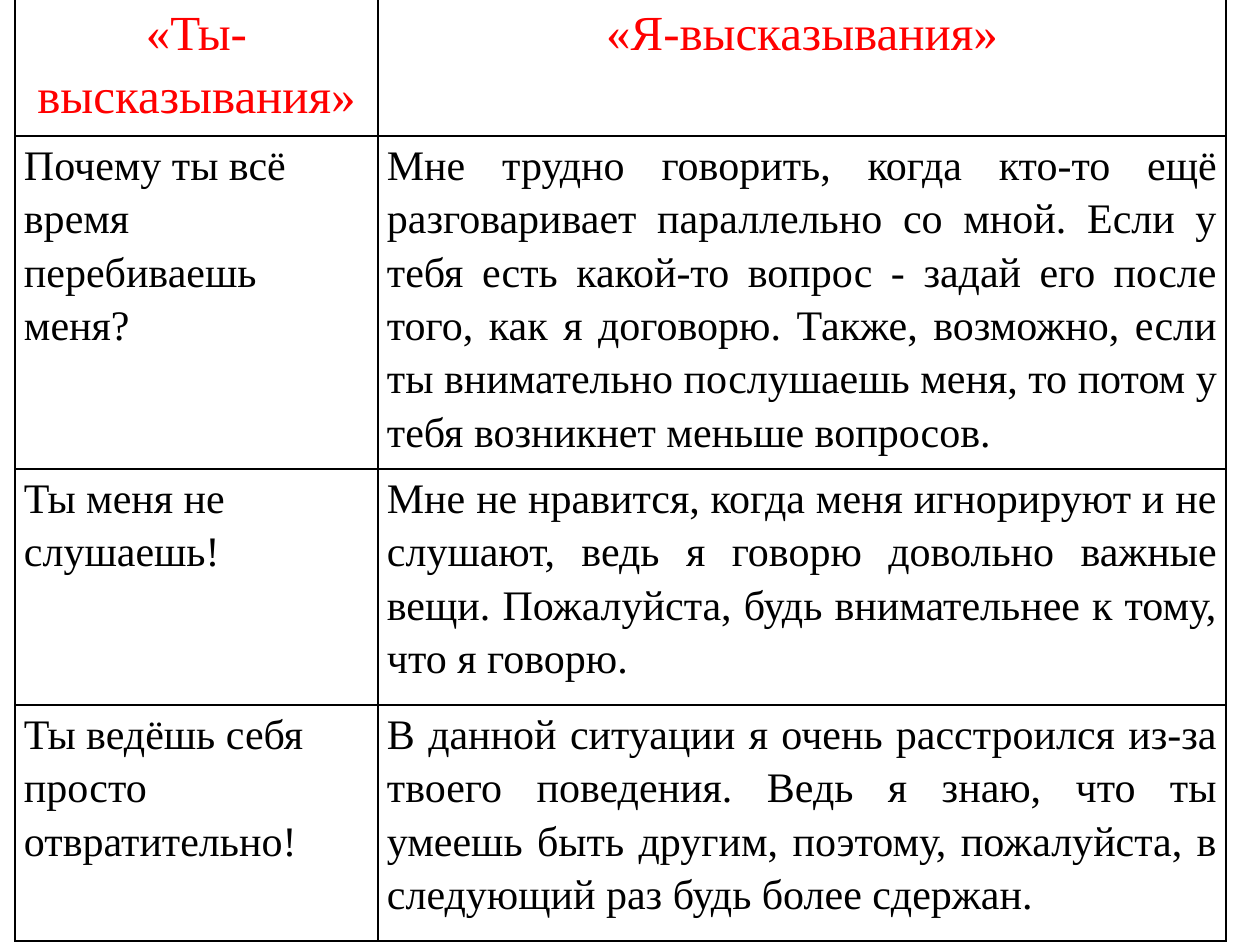
from lxml.etree import SubElement
from pptx import Presentation
from pptx.dml.color import RGBColor
from pptx.enum.text import PP_ALIGN
from pptx.oxml.ns import qn
from pptx.util import Pt

SCALE = 914400 // 126
WIDTHS = [363, 848]
HEIGHTS = [137, 333, 236, 236]
ROWS = [
    ("«Ты-высказывания»", "«Я-высказывания»"),
    ("Почему ты всё время перебиваешь меня?",
     "Мне трудно говорить, когда кто-то ещё разговаривает параллельно со мной. "
     "Если у тебя есть какой-то вопрос - задай его после того, как я договорю. "
     "Также, возможно, если ты внимательно послушаешь меня, "
     "то потом у тебя возникнет меньше вопросов."),
    ("Ты меня не слушаешь!",
     "Мне не нравится, когда меня игнорируют и не слушают, "
     "ведь я говорю довольно важные вещи. "
     "Пожалуйста, будь внимательнее к тому, что я говорю."),
    ("Ты ведёшь себя просто отвратительно!",
     "В данной ситуации я очень расстроился из-за твоего поведения. "
     "Ведь я знаю, что ты умеешь быть другим, поэтому, пожалуйста, "
     "в следующий раз будь более сдержан."),
]


def px(count):
    return count * SCALE


def color(code):
    return RGBColor.from_string(code)


def add_border(cell, code="000000", width=1):
    props = cell._tc.get_or_add_tcPr()
    for side in ("a:lnL", "a:lnR", "a:lnT", "a:lnB"):
        line = SubElement(props, qn(side), w=str(Pt(width)))
        fill = SubElement(line, qn("a:solidFill"))
        SubElement(fill, qn("a:srgbClr"), val=code)


def fill_cell(cell, text, size, code, align):
    cell.margin_left = cell.margin_right = px(9)
    cell.margin_top = cell.margin_bottom = 0
    add_border(cell)
    cell.fill.background()
    cell.text = text
    para = cell.text_frame.paragraphs[0]
    para.alignment = align
    para.line_spacing = 1.15
    para.space_after = Pt(10)
    font = para.font
    font.name = "Times New Roman"
    font.size = Pt(size)
    font.bold = False
    font.color.rgb = color(code)


def add_grid(slide):
    frame = slide.shapes.add_table(
        len(ROWS), len(WIDTHS), px(15), px(-1),
        px(sum(WIDTHS)), px(sum(HEIGHTS)))
    table = frame.table
    table.first_row = table.horz_banding = False
    for col, width in zip(table.columns, WIDTHS):
        col.width = px(width)
    for row, height in zip(table.rows, HEIGHTS):
        row.height = px(height)
    return table


def main():
    deck = Presentation()
    deck.slide_width, deck.slide_height = px(1260), px(945)
    slide = deck.slides.add_slide(deck.slide_layouts[6])
    table = add_grid(slide)
    for r, texts in enumerate(ROWS):
        for c, text in enumerate(texts):
            cell = table.cell(r, c)
            if r == 0:
                fill_cell(cell, text, 28, "FF0000", PP_ALIGN.CENTER)
            else:
                align = PP_ALIGN.JUSTIFY if c else PP_ALIGN.LEFT
                fill_cell(cell, text, 24, "000000", align)
    deck.save("out.pptx")


if __name__ == "__main__":
    main()
